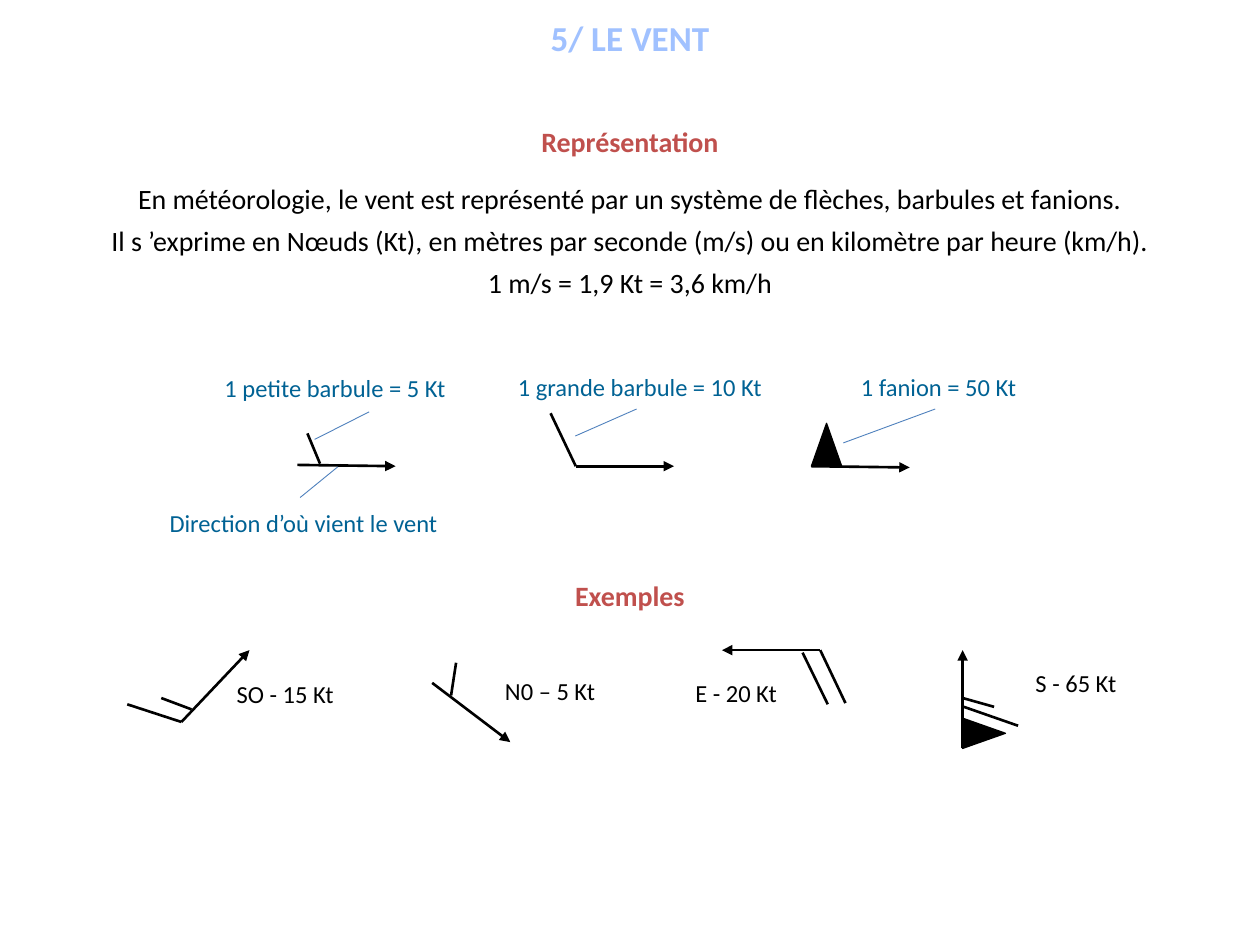
import pptx
import pptx.util
import pptx.dml.color
import pptx.enum.shapes
import pptx.enum.text
import pptx.oxml
import pptx.oxml.ns

COLUMNS, ROWS = 100, 75
COLORS = {
    "title": "A0C1FF",
    "heading": "C0504D",
    "text": "000000",
    "symbol": "000000",
    "label": "006294",
    "leader": "4F81BD",
}
SHAPES = pptx.enum.shapes.MSO_SHAPE
ALIGN = pptx.enum.text.PP_ALIGN
ANCHOR = pptx.enum.text.MSO_ANCHOR
AUTO_SIZE = pptx.enum.text.MSO_AUTO_SIZE


def rgb(color):
    return pptx.dml.color.RGBColor.from_string(COLORS[color])


def add_drawing_element(parent, tag, **attributes):
    element = pptx.oxml.parse_xml(f"<a:{tag} {pptx.oxml.ns.nsdecls('a')}/>")
    for name, value in attributes.items():
        element.set(name, value)
    parent.append(element)


class WindSlide:
    """Holds the slide and its style; lengths are columns and rows of the grid."""

    font = "Calibri"

    def __init__(self, presentation):
        self.slide = presentation.slides.add_slide(presentation.slide_layouts[5])
        self.column = presentation.slide_width / COLUMNS
        self.row = presentation.slide_height / ROWS

    def place(self, *lengths):
        """Turn alternating columns and rows into slide lengths."""
        units = (self.column, self.row) * 2
        return [pptx.util.Emu(round(length * unit)) for length, unit in zip(lengths, units)]

    def set_text(self, shape, text, size, color, bold=False, align=ALIGN.CENTER,
                 anchor=ANCHOR.TOP, spacing=None, after=0):
        frame = shape.text_frame
        frame.text = text
        frame.word_wrap = True
        frame.vertical_anchor = anchor
        paragraph = frame.paragraphs[0]
        paragraph.alignment = align
        paragraph.space_after = pptx.util.Pt(after)
        if spacing:
            paragraph.line_spacing = spacing
        font = paragraph.runs[0].font
        font.name, font.size, font.bold = self.font, pptx.util.Pt(size), bold
        font.color.rgb = rgb(color)

    def title(self, text, box):
        shape = self.slide.shapes.title
        shape.left, shape.top, shape.width, shape.height = self.place(*box)
        shape.text_frame.auto_size = AUTO_SIZE.NONE
        self.set_text(shape, text, 20, "title", bold=True, anchor=ANCHOR.MIDDLE, after=12)

    def centered_line(self, text, top, height, color, **style):
        shape = self.slide.shapes.add_textbox(*self.place(0, top, COLUMNS, height))
        self.set_text(shape, text, 16, color, **style)
        shape.text_frame.auto_size = AUTO_SIZE.SHAPE_TO_FIT_TEXT

    def heading(self, text, top):
        self.centered_line(text, top, 3.7, "heading", bold=True, after=6)

    def sentence(self, text, top):
        self.centered_line(text, top, 4.4, "text", spacing=1.3)

    def example_label(self, text, left, top):
        shape = self.slide.shapes.add_textbox(*self.place(left, top, 14, 5.3))
        self.set_text(shape, text, 14, "text", align=ALIGN.LEFT)

    def callout(self, text, left, top, leader):
        """Add a label whose leader is given as y, x, y, x shares of its box."""
        shape = self.slide.shapes.add_shape(
            SHAPES.LINE_CALLOUT_1_NO_BORDER, *self.place(left, top, 27, 4.2))
        for index, share in enumerate(leader):
            shape.adjustments[index] = share
        shape.shadow.inherit = False
        shape.fill.background()
        shape.line.color.rgb = rgb("leader")
        shape.line.width = pptx.util.Pt(0.5)
        self.set_text(shape, text, 14, "label", anchor=ANCHOR.MIDDLE)

    def stroke(self, shapes, points, arrow=False):
        connector = shapes.add_connector(
            pptx.enum.shapes.MSO_CONNECTOR.STRAIGHT, *self.place(*points))
        connector.line.color.rgb = rgb("symbol")
        connector.line.width = pptx.util.Pt(1.5)
        properties = connector._element.spPr
        if arrow:
            line = properties.find(pptx.oxml.ns.qn("a:ln"))
            add_drawing_element(line, "tailEnd", type="triangle")
        add_drawing_element(properties, "effectLst")

    def pennant(self, shapes, left, top, rotation):
        shape = shapes.add_shape(
            SHAPES.ISOSCELES_TRIANGLE, *self.place(left, top, 2.4, 3.4))
        shape.rotation = rotation
        shape.shadow.inherit = False
        shape.fill.solid()
        shape.fill.fore_color.rgb = rgb("symbol")
        shape.line.color.rgb = rgb("symbol")
        shape.line.width = pptx.util.Pt(0.75)

    def wind_symbol(self, shaft, barbs=(), pennant=None):
        """Group an arrow with its barbs and its pennant (left, top, rotation)."""
        shapes = self.slide.shapes.add_group_shape().shapes
        if pennant:
            self.pennant(shapes, *pennant)
        self.stroke(shapes, shaft, arrow=True)
        for barb in barbs:
            self.stroke(shapes, barb)


def main():
    presentation = pptx.Presentation()
    presentation.slide_width = pptx.util.Inches(10)
    presentation.slide_height = pptx.util.Inches(7.5)
    wind = WindSlide(presentation)

    wind.title("5/ LE VENT", (0, 0.3, COLUMNS, 5.4))
    wind.heading("Représentation", 9.4)
    sentences = (
        "En météorologie, le vent est représenté par un système de flèches, barbules et fanions.",
        "Il s ’exprime en Nœuds (Kt), en mètres par seconde (m/s) ou en kilomètre par heure (km/h).",
        "1 m/s = 1,9 Kt = 3,6 km/h",
    )
    for index, sentence in enumerate(sentences):
        wind.sentence(sentence, 13.1 + 3.35 * index)

    for text, left, top, leader in (
        ("Direction d’où vient le vent", 10.6, 39.4, (0.02, 0.49, -0.61, 0.61)),
        ("1 petite barbule = 5 Kt", 13.1, 28.7, (0.95, 0.6, 1.47, 0.44)),
        ("1 grande barbule = 10 Kt", 37.3, 28.6, (0.92, 0.49, 1.43, 0.31)),
        ("1 fanion = 50 Kt", 61, 28.6, (0.92, 0.49, 1.56, 0.22)),
    ):
        wind.callout(text, left, top, leader)

    wind.wind_symbol((23.6, 36.9, 31.4, 37), [(25.4, 36.8, 24.4, 34.4)])
    wind.wind_symbol((45.7, 37, 53.5, 37), [(45.7, 37, 43.7, 32.8)])
    wind.wind_symbol((64.4, 37, 72.2, 37.1), pennant=(64.4, 33.6, 0))

    wind.heading("Exemples", 45.4)
    for text, left, top in (
        ("SO - 15 Kt", 17.8, 53.4),
        ("N0 – 5 Kt", 39.1, 53.2),
        ("E - 20 Kt", 54.2, 53.3),
        ("S - 65 Kt", 81.2, 52.5),
    ):
        wind.example_label(text, left, top)

    wind.wind_symbol((14.4, 57.3, 19.8, 51.6),
                     [(14.4, 57.3, 10.1, 55.9), (15.2, 56.3, 12.8, 55.4)])
    wind.wind_symbol((34.3, 54.2, 40.5, 58.9), [(35.8, 55.2, 36.2, 52.6)])
    wind.wind_symbol((65.1, 51.6, 57.3, 51.6),
                     [(65.1, 51.6, 67.1, 55.8), (63.7, 51.8, 65.7, 55.9)])
    wind.wind_symbol((76.4, 59.4, 76.4, 51.6),
                     [(80.8, 57.6, 76.5, 56.1), (78.9, 56.1, 76.4, 55.4)],
                     pennant=(76.9, 56.5, 90))

    presentation.save("out.pptx")


if __name__ == "__main__":
    main()
